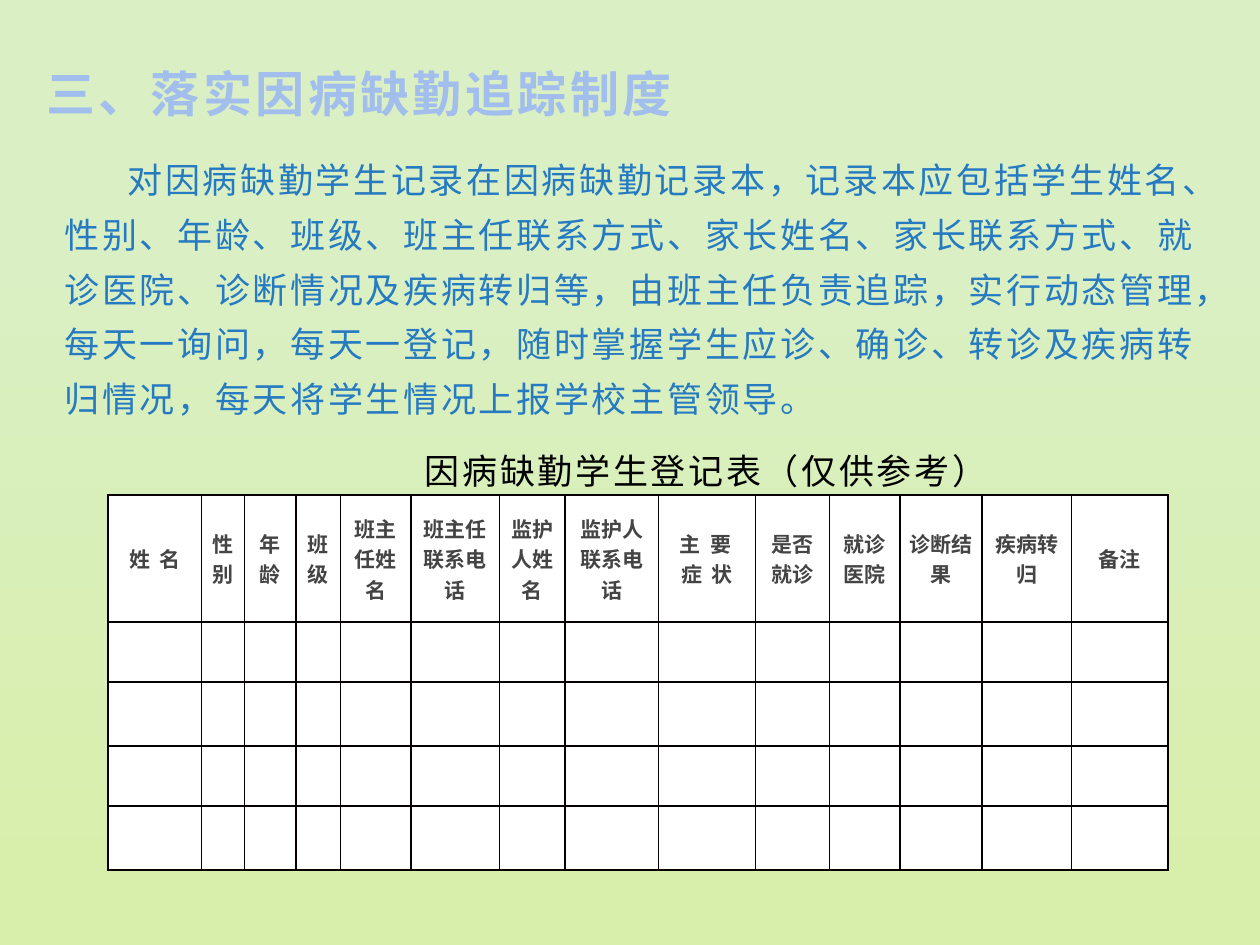
"""Build a slide on tracking pupils' sick leave, with a blank register."""
from dataclasses import dataclass

from lxml import etree
from pptx import Presentation
from pptx import util as u
from pptx.dml import color
from pptx.enum import text
from pptx.oxml import ns


@dataclass(frozen=True)
class Theme:
    font: str = "Noto Sans CJK SC"
    sky: tuple = ((0.25, "DAEFC4"), (0.94, "D8EFAB"))
    heading: str = "A2BEEC"
    body: str = "257AC1"
    caption: str = "000000"
    header: str = "444444"
    cell: str = "FFFFFF"
    border: str = "080000"
    heading_pt: int = 28
    body_pt: int = 20
    header_pt: int = 12


THEME = Theme()
HEADING = "三、落实因病缺勤追踪制度"
RULE = (
    "对因病缺勤学生记录在因病缺勤记录本，记录本应包括学生姓名、性别、年龄、班级、"
    "班主任联系方式、家长姓名、家长联系方式、就诊医院、诊断情况及疾病转归等，"
    "由班主任负责追踪，实行动态管理，每天一询问，每天一登记，随时掌握学生应诊、"
    "确诊、转诊及疾病转归情况，每天将学生情况上报学校主管领导。"
)
CAPTION = "因病缺勤学生登记表（仅供参考）"
COLUMNS = (
    ("姓 名", 1.88), ("性别", 0.87), ("年龄", 1.04), ("班级", 0.89),
    ("班主任姓名", 1.43), ("班主任联系电话", 1.78), ("监护人姓名", 1.32),
    ("监护人联系电话", 1.88), ("主 要 症 状", 1.96), ("是否就诊", 1.49),
    ("就诊医院", 1.42), ("诊断结果", 1.66), ("疾病转归", 1.8), ("备注", 1.95),
)
ROW_HEIGHTS = (2.56, 1.21, 1.29, 1.21, 1.29)


def paint_background(slide):
    fill = slide.background.fill
    fill.gradient()
    fill.gradient_angle = 270
    for stop, (position, shade) in zip(fill.gradient_stops, THEME.sky):
        stop.position = position
        stop.color.rgb = color.RGBColor.from_string(shade)


def add_run(paragraph, words, size, shade, bold=False, spacing=0):
    run = paragraph.add_run()
    run.text = words
    run.font.size = u.Pt(size)
    run.font.bold = bold
    run.font.name = THEME.font
    run.font.color.rgb = color.RGBColor.from_string(shade)
    properties = run.font._element
    etree.SubElement(properties, ns.qn("a:ea"), typeface=THEME.font)
    if spacing:
        properties.set("spc", str(round(spacing * 100)))


def add_frame(slide, left, top, width, height, insets, anchor):
    box = slide.shapes.add_textbox(u.Cm(left), u.Cm(top), u.Cm(width), u.Cm(height))
    frame = box.text_frame
    frame.word_wrap = True
    frame.vertical_anchor = anchor
    (frame.margin_left, frame.margin_top,
     frame.margin_right, frame.margin_bottom) = map(u.Cm, insets)
    return frame


def add_heading(slide):
    frame = add_frame(slide, 0.65, 0.66, 15.72, 1.9, (0.28, 0.1, 0.2, 0.1),
                      text.MSO_ANCHOR.BOTTOM)
    add_run(frame.paragraphs[0], HEADING, THEME.heading_pt, THEME.heading, True, 2)


def add_body(slide):
    frame = add_frame(slide, 1.02, 2.95, 23.42, 15.09, (0.28, 0, 0.23, 0),
                      text.MSO_ANCHOR.TOP)
    rule, caption = frame.paragraphs[0], frame.add_paragraph()
    for paragraph in (rule, caption):
        paragraph.line_spacing = 1.3
        paragraph.space_after = u.Pt(10)
    rule._p.get_or_add_pPr().set("indent", str(u.Cm(1.27)))
    caption._p.get_or_add_pPr().set("marL", str(u.Cm(2.96)))
    caption.alignment = text.PP_ALIGN.CENTER
    add_run(rule, RULE, THEME.body_pt, THEME.body, spacing=1.5)
    add_run(caption, CAPTION, THEME.body_pt, THEME.caption, spacing=1.5)


def style_cell(cell):
    properties = cell._tc.get_or_add_tcPr()
    for side in ("lnL", "lnR", "lnT", "lnB"):
        line = etree.SubElement(properties, ns.qn(f"a:{side}"), w=str(u.Pt(1)))
        solid = etree.SubElement(line, ns.qn("a:solidFill"))
        etree.SubElement(solid, ns.qn("a:srgbClr"), val=THEME.border)
    cell.fill.solid()
    cell.fill.fore_color.rgb = color.RGBColor.from_string(THEME.cell)
    cell.margin_left = cell.margin_right = u.Cm(0.18)
    cell.margin_top = cell.margin_bottom = 0
    cell.vertical_anchor = text.MSO_ANCHOR.MIDDLE


def add_register(slide):
    width = sum(column_width for _, column_width in COLUMNS)
    register = slide.shapes.add_table(
        len(ROW_HEIGHTS), len(COLUMNS), u.Cm(2.18), u.Cm(9.98),
        u.Cm(width), u.Cm(sum(ROW_HEIGHTS))).table
    register.horz_banding = False
    for row, height in zip(register.rows, ROW_HEIGHTS):
        row.height = u.Cm(height)
    for cell in register.iter_cells():
        style_cell(cell)
    for index, (label, column_width) in enumerate(COLUMNS):
        register.columns[index].width = u.Cm(column_width)
        paragraph = register.cell(0, index).text_frame.paragraphs[0]
        paragraph.alignment = text.PP_ALIGN.CENTER
        add_run(paragraph, label, THEME.header_pt, THEME.header, True,
                1.35 if " " in label else 0)


def main():
    deck = Presentation()
    deck.slide_width, deck.slide_height = u.Cm(25.4), u.Cm(19.05)
    slide = deck.slides.add_slide(deck.slide_layouts[6])
    paint_background(slide)
    add_heading(slide)
    add_body(slide)
    add_register(slide)
    deck.save("out.pptx")


if __name__ == "__main__":
    main()
